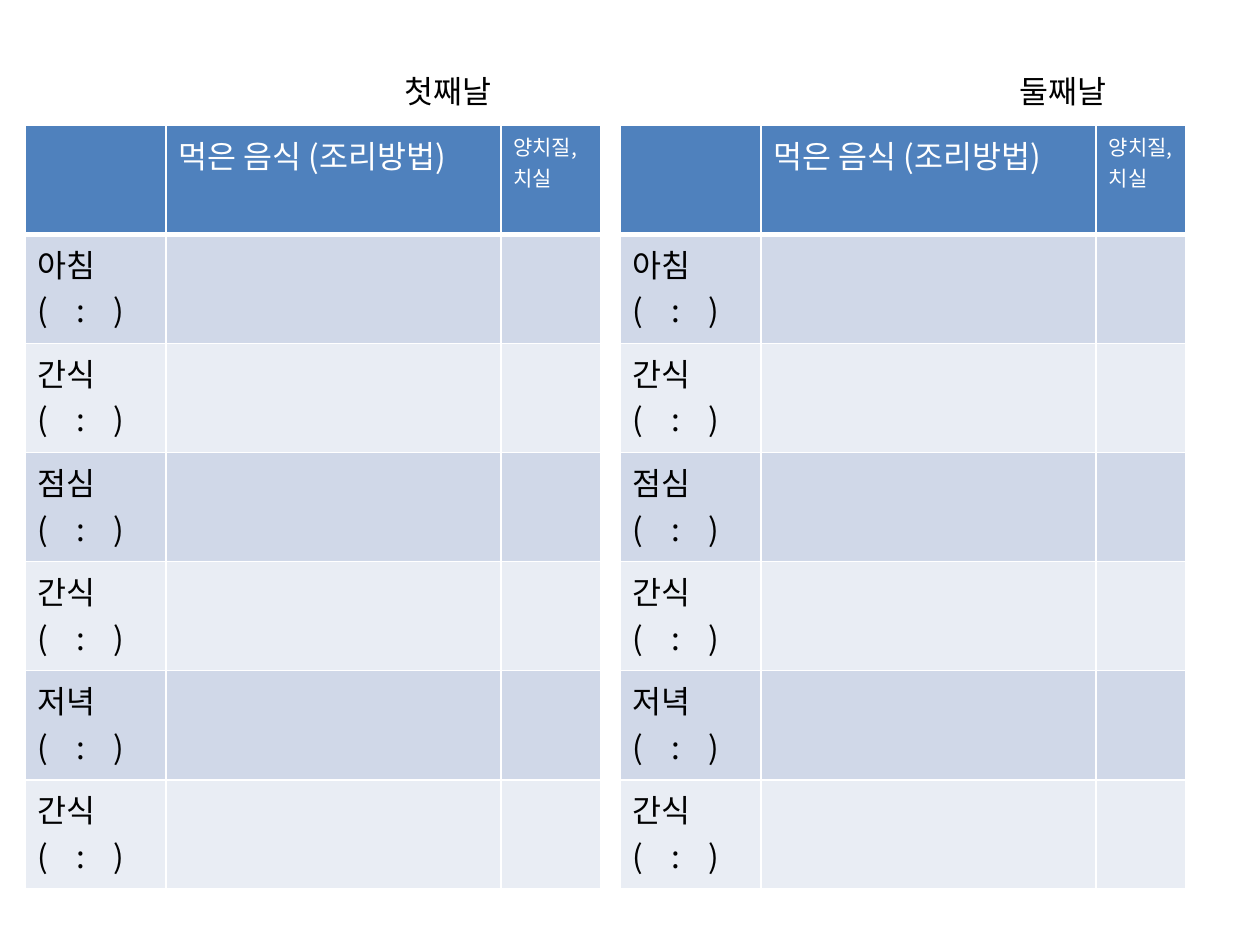
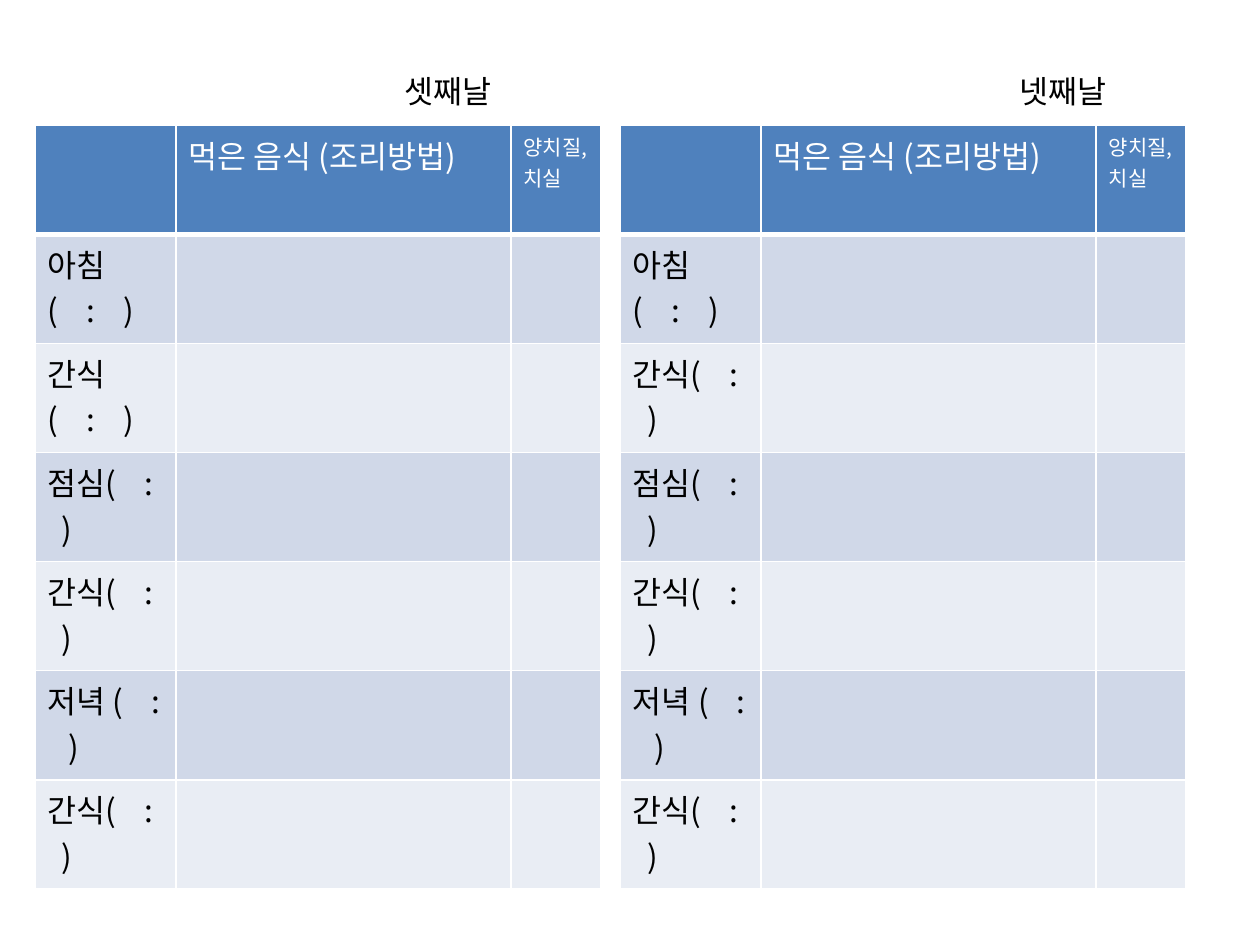
from lxml import etree
from pptx import Presentation
from pptx.dml.color import RGBColor
from pptx.enum import text
from pptx.oxml.ns import qn
from pptx.util import Pt

# Content
HEADINGS = [("", 18), ("먹은 음식 (조리방법)", 18), ("양치질,치실", 12)]
TIME = "(    :    )"
BREAKFAST = f"아침\n{TIME}"
SNACK, SNACK_SPLIT = f"간식{TIME}", f"간식\n{TIME}"
LUNCH, LUNCH_SPLIT = f"점심{TIME}", f"점심\n{TIME}"
DINNER, DINNER_SPLIT = f"저녁 {TIME}", f"저녁\n{TIME}"

SPLIT_MEALS = [BREAKFAST, SNACK_SPLIT, LUNCH_SPLIT, SNACK_SPLIT, DINNER_SPLIT, SNACK_SPLIT]
INLINE_MEALS = [BREAKFAST, SNACK, LUNCH, SNACK, DINNER, SNACK]
THIRD_DAY_MEALS = [BREAKFAST, SNACK_SPLIT] + INLINE_MEALS[2:]

# Each day: label, meals, width of the brushing column
SLIDES = [
    [("첫째날", SPLIT_MEALS, 56.9), ("둘째날", SPLIT_MEALS, 51.1)],
    [("셋째날", THIRD_DAY_MEALS, 51.1), ("넷째날", INLINE_MEALS, 51.1)],
]

# Shared look and layout, in points
FONT = "Noto Sans CJK KR"
WHITE, BLACK, HEADER = "FFFFFF", "000000", "4F81BD"
BANDS = ["D0D8E8", "E9EDF4"]
TABLE_RIGHTS = [343.1, 677.5]
LABEL_LEFTS = [223.9, 575.3]
TABLE_TOP, ROW_HEIGHT = 71.6, 62.35
MEAL_WIDTH, FOOD_WIDTH = 80.5, 191.4
LABEL_TOP, LABEL_WIDTH, LABEL_HEIGHT = 37.4, 102.2, 29


def color(value):
    return RGBColor.from_string(value)


def write(text_frame, words, size, ink):
    text_frame.text = words
    for paragraph in text_frame.paragraphs:
        for run in paragraph.runs:
            run.font.size = Pt(size)
            run.font.bold = False
            run.font.color.rgb = color(ink)
            run.font.name = FONT
            east_asian = etree.SubElement(run.font._element, qn("a:ea"))
            east_asian.set("typeface", FONT)


def add_borders(cell, bottom):
    properties = cell._tc.get_or_add_tcPr()
    for side, width in (("L", 1), ("R", 1), ("T", 1), ("B", bottom)):
        line = etree.SubElement(properties, qn(f"a:ln{side}"), w=str(Pt(width)))
        fill = etree.SubElement(line, qn("a:solidFill"))
        etree.SubElement(fill, qn("a:srgbClr"), val=WHITE)


def style_cell(cell, fill, bottom=1):
    add_borders(cell, bottom)
    cell.fill.solid()
    cell.fill.fore_color.rgb = color(fill)


def add_meal_table(slide, right, meals, brushing_width):
    widths = [MEAL_WIDTH, FOOD_WIDTH, brushing_width]
    row_count = len(meals) + 1
    table = slide.shapes.add_table(
        row_count, len(widths), Pt(right - sum(widths)), Pt(TABLE_TOP),
        Pt(sum(widths)), Pt(row_count * ROW_HEIGHT)).table
    for column, width in zip(table.columns, widths):
        column.width = Pt(width)
    for row in table.rows:
        row.height = Pt(ROW_HEIGHT)

    # Header row
    for cell, (heading, size) in zip(table.rows[0].cells, HEADINGS):
        style_cell(cell, HEADER, bottom=3)
        write(cell.text_frame, heading, size, WHITE)

    # Meal rows in alternating bands
    for index, meal in enumerate(meals):
        cells = list(table.rows[index + 1].cells)
        for cell in cells:
            style_cell(cell, BANDS[index % 2])
        write(cells[0].text_frame, meal, 18, BLACK)


def add_day_label(slide, left, label):
    box = slide.shapes.add_textbox(
        Pt(left), Pt(LABEL_TOP), Pt(LABEL_WIDTH), Pt(LABEL_HEIGHT))
    box.text_frame.word_wrap = True
    box.text_frame.auto_size = text.MSO_AUTO_SIZE.SHAPE_TO_FIT_TEXT
    write(box.text_frame, label, 18, BLACK)


def main():
    presentation = Presentation()
    presentation.slide_width, presentation.slide_height = Pt(720), Pt(540)
    for days in SLIDES:
        slide = presentation.slides.add_slide(presentation.slide_layouts[6])
        for day, right, left in zip(days, TABLE_RIGHTS, LABEL_LEFTS):
            label, meals, brushing_width = day
            add_meal_table(slide, right, meals, brushing_width)
            add_day_label(slide, left, label)
    presentation.save("out.pptx")


if __name__ == "__main__":
    main()
